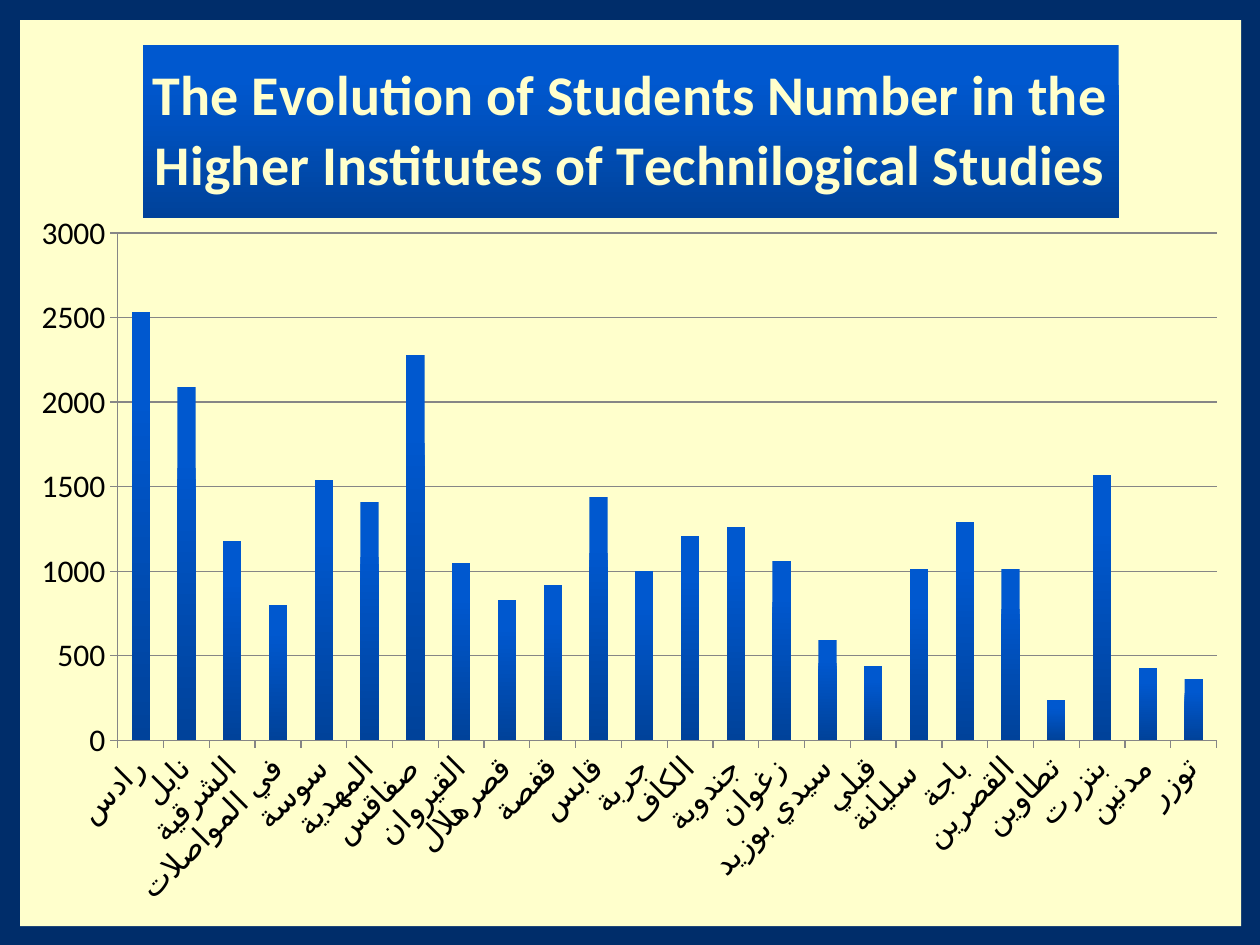
from dataclasses import dataclass

from lxml.etree import SubElement
from pptx import Presentation
from pptx.chart.data import CategoryChartData
from pptx.dml.color import RGBColor
from pptx.enum.chart import XL_CHART_TYPE, XL_TICK_MARK
from pptx.oxml import parse_xml
from pptx.oxml.ns import nsdecls, qn
from pptx.util import Inches, Pt


@dataclass(frozen=True)
class Theme:
    font: str = "Calibri"
    frame: str = "002D6A"
    paper: str = "FFFFCC"
    text: str = "000000"
    grid: str = "868686"
    blue_top: str = "0058CF"
    blue_bottom: str = "00429A"
    title_size: int = 32
    label_size: int = 18


STUDENTS = {
    "رادس": 2530, "نابل": 2090, "الشرقية": 1180, "في المواصلات": 800,
    "سوسة": 1540, "المهدية": 1410, "صفاقس": 2280, "القيروان": 1050,
    "قصرهلال": 830, "قفصة": 920, "قابس": 1440, "جربة": 1000,
    "الكاف": 1210, "جندوبة": 1260, "زغوان": 1060, "سيدي بوزيد": 590,
    "قبلي": 440, "سليانة ": 1010, "باجة": 1290, "القصرين": 1010,
    "تطاوين": 240, "بنزرت": 1570, "مدنين": 430, "توزر": 360,
}
TITLE = "The Evolution of Students Number in the Higher Institutes of Technilogical Studies"


class Slide:
    def __init__(self, deck, theme):
        self.theme = theme
        self.page = deck.slides.add_slide(deck.slide_layouts[6])
        fill = self.page.background.fill
        fill.solid()
        fill.fore_color.rgb = RGBColor.from_string(theme.frame)

    def style_font(self, font, size, color, bold=False):
        values = {"name": self.theme.font, "size": Pt(size), "bold": bold}
        for name, value in values.items():
            setattr(font, name, value)
        font.color.rgb = RGBColor.from_string(color)

    def shade(self, fill):
        fill.gradient()
        fill.gradient_angle = 270
        stops = ((0.2, self.theme.blue_top), (1, self.theme.blue_bottom))
        for stop, (position, color) in zip(fill.gradient_stops, stops):
            stop.position = position
            stop.color.rgb = RGBColor.from_string(color)

    def line(self, line):
        line.width = Pt(0.75)
        line.color.rgb = RGBColor.from_string(self.theme.grid)

    def column_chart(self, title, values, left, top, width, height):
        data = CategoryChartData()
        data.categories = list(values)
        data.add_series("Series 1", list(values.values()))
        chart = self.page.shapes.add_chart(
            XL_CHART_TYPE.COLUMN_CLUSTERED, left, top, width, height, data
        ).chart
        chart.has_legend = False
        self.style_font(chart.font, self.theme.label_size, self.theme.text)
        self.chart_title(chart, title)
        self.chart_area(chart)
        self.axes(chart)
        plot = chart.plots[0]
        plot.gap_width = 150
        plot.vary_by_categories = False
        self.shade(plot.series[0].format.fill)

    def chart_title(self, chart, text):
        chart.has_title = True
        title = chart.chart_title
        title.include_in_layout = False
        para = title.text_frame.paragraphs[0]
        span = para.add_run()
        span.text = text
        self.style_font(span.font, self.theme.title_size, self.theme.paper, True)
        self.shade(title.format.fill)

    def chart_area(self, chart):
        root = chart.element if hasattr(chart, "element") else chart._chartSpace
        root.find(qn("c:chart")).addnext(parse_xml(
            f'<c:spPr {nsdecls("c", "a")}><a:solidFill><a:srgbClr val="{self.theme.paper}"/>'
            "</a:solidFill><a:ln><a:noFill/></a:ln></c:spPr>"
        ))
        plot_area = root.find(qn("c:chart")).find(qn("c:plotArea"))
        layout = plot_area.find(qn("c:layout"))
        if layout is None:
            layout = parse_xml(f'<c:layout {nsdecls("c")}/>')
            plot_area.insert(0, layout)
        manual = SubElement(layout, qn("c:manualLayout"))
        values = {"layoutTarget": "inner", "xMode": "edge", "yMode": "edge",
                  "x": 0.08, "y": 0.235, "w": 0.9, "h": 0.56}
        for name, value in values.items():
            SubElement(manual, qn(f"c:{name}")).set("val", str(value))

    def axes(self, chart):
        for axis in (chart.category_axis, chart.value_axis):
            axis.major_tick_mark = XL_TICK_MARK.OUTSIDE
            axis.minor_tick_mark = XL_TICK_MARK.NONE
            self.line(axis.format.line)
            self.style_font(axis.tick_labels.font, self.theme.label_size, self.theme.text)
        scale = {"minimum_scale": 0, "maximum_scale": 3000, "major_unit": 500,
                 "has_major_gridlines": True}
        for name, value in scale.items():
            setattr(chart.value_axis, name, value)
        self.line(chart.value_axis.major_gridlines.format.line)
        labels = chart.category_axis._element.find(qn("c:txPr"))
        labels.find(qn("a:bodyPr")).set("rot", "-2700000")


def main():
    deck = Presentation()
    deck.slide_width = Inches(10)
    deck.slide_height = Inches(7.5)
    slide = Slide(deck, Theme())
    slide.column_chart(TITLE, STUDENTS, Inches(0.16), Inches(0.16), Inches(9.69), Inches(7.19))
    deck.save("out.pptx")


if __name__ == "__main__":
    main()
